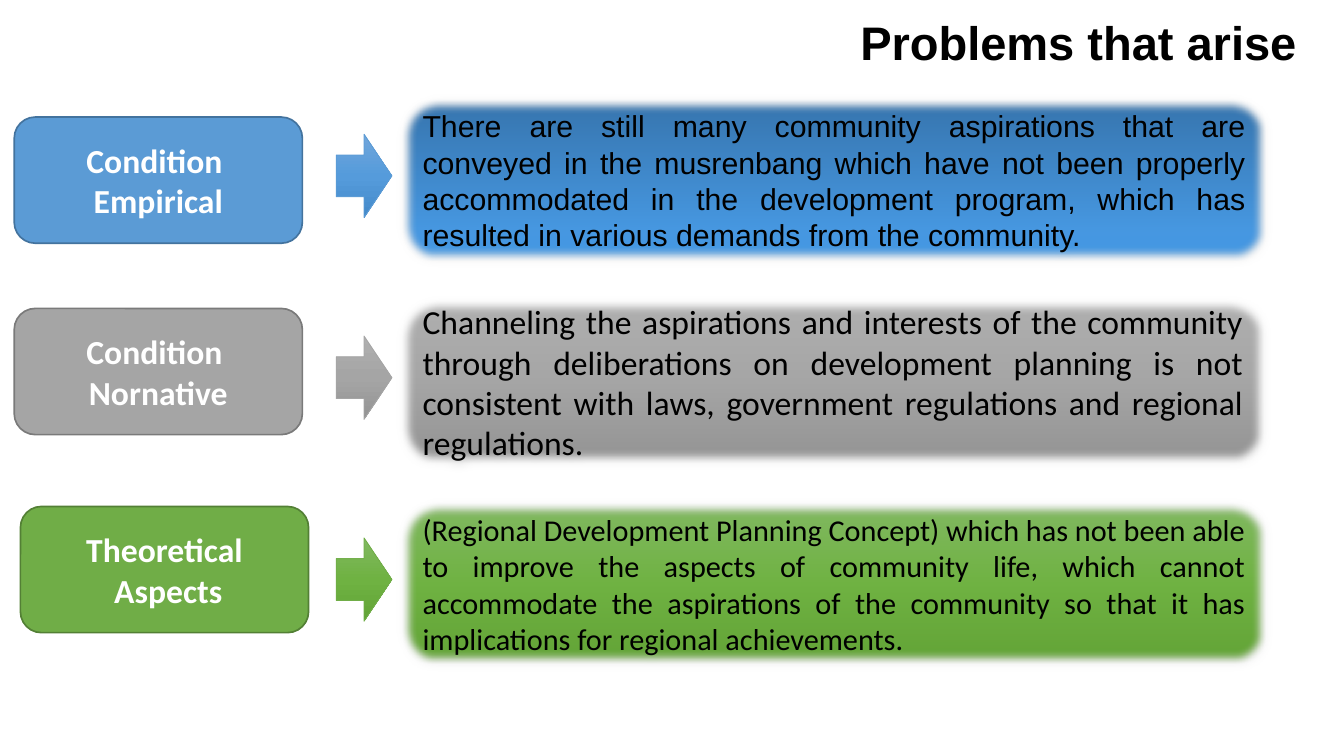
from copy import deepcopy
from dataclasses import dataclass

from pptx import Presentation
from pptx.dml.color import RGBColor
from pptx.enum.shapes import MSO_SHAPE
from pptx.enum.text import MSO_ANCHOR, MSO_AUTO_SIZE, PP_ALIGN
from pptx.oxml import parse_xml
from pptx.oxml.ns import nsdecls, qn
from pptx.shapes.autoshape import Shape
from pptx.slide import Slide
from pptx.text.text import TextFrame
from pptx.util import Cm, Pt

Stops = list[tuple[float, str]]

ROW_TOP, ROW_STEP = 2.11, 4.24
PANEL_LEFT, PANEL_HEIGHT = 8.46, 3.35
ARROW_LEFT, ARROW_WIDTH, ARROW_HEIGHT = 7.06, 1.17, 1.75
ARROW_DROP = 0.71
LABEL_WIDTH, LABEL_HEIGHT = 6.05, 2.65


@dataclass
class Problem:
    label: list[str]
    label_left: float
    label_top: float
    color: str
    border: str
    arrow_stops: Stops
    panel_stops: Stops
    panel_width: float
    text: str
    font: str
    size: int


BLUE = [(0, "71A6DB"), (0.5, "559BDB"), (1, "448ACA")]
DEEP_BLUE = [(0, "3674AD"), (0.8, "4697E0"), (1, "4498E4")]
GRAY = [(0, "AFAFAF"), (0.5, "A5A5A5"), (1, "939393")]
GREEN = [(0, "81B861"), (0.5, "6FB242"), (1, "62A336")]

PROBLEMS = [
    Problem(["Condition ", "Empirical"], 0.3, 2.46, "5B9BD5", "43739E",
            BLUE, DEEP_BLUE, 18.11,
            "There are still many community aspirations that are conveyed in "
            "the musrenbang which have not been properly accommodated in the "
            "development program, which has resulted in various demands from "
            "the community.", "Arial", 18),
    Problem(["Condition ", "Nornative"], 0.3, 6.48, "A5A5A5", "7A7A7A",
            GRAY, GRAY, 18.06,
            "Channeling the aspirations and interests of the community "
            "through deliberations on development planning is not consistent "
            "with laws, government regulations and regional regulations.",
            "Calibri", 20),
    Problem(["Theoretical", " Aspects"], 0.43, 10.64, "70AD47", "538035",
            GREEN, GREEN, 18.11,
            "(Regional Development Planning Concept) which has not been able "
            "to improve the aspects of community life, which cannot "
            "accommodate the aspirations of the community so that it has "
            "implications for regional achievements.", "Calibri", 18),
]


def rgb(color: str) -> RGBColor:
    return RGBColor.from_string(color)


def write(tf: TextFrame, lines: list[str], font: str, size: int, color: str,
          align: PP_ALIGN, bold: bool = False) -> None:
    tf.text = "\n".join(lines)
    for p in tf.paragraphs:
        p.alignment = align
        p.font.name = font
        p.font.size = Pt(size)
        p.font.bold = bold
        p.font.color.rgb = rgb(color)


def add_outlined(slide: Slide, kind: MSO_SHAPE, left: float, top: float,
                 width: float, height: float, line: str,
                 line_width: float) -> Shape:
    sp = slide.shapes.add_shape(kind, Cm(left), Cm(top), Cm(width), Cm(height))
    sp.shadow.inherit = False
    sp.line.color.rgb = rgb(line)
    sp.line.width = Pt(line_width)
    return sp


def fill_gradient(sp: Shape, stops: Stops) -> None:
    """Fill from top to bottom with three colour stops."""
    sp.fill.gradient()
    sp.fill.gradient_angle = 270
    gs_list = sp._element.spPr.find(".//" + qn("a:gsLst"))
    gs_list.insert(1, deepcopy(gs_list[0]))
    for stop, (position, color) in zip(sp.fill.gradient_stops, stops):
        stop.position = position
        stop.color.rgb = rgb(color)


def soften(sp: Shape) -> None:
    """Add a faint shadow and blurred edges."""
    effects = sp._element.spPr.find(qn("a:effectLst"))
    effects.append(parse_xml(
        f'<a:outerShdw {nsdecls("a")} blurRad="76200" dist="0" dir="18900000">'
        '<a:srgbClr val="000000"><a:alpha val="20000"/></a:srgbClr>'
        '</a:outerShdw>'))
    effects.append(parse_xml(f'<a:softEdge {nsdecls("a")} rad="63500"/>'))


def add_problem(slide: Slide, problem: Problem, top: float) -> None:
    arrow = add_outlined(slide, MSO_SHAPE.RIGHT_ARROW, ARROW_LEFT,
                         top + ARROW_DROP, ARROW_WIDTH, ARROW_HEIGHT,
                         problem.color, 0.5)
    fill_gradient(arrow, problem.arrow_stops)

    panel = add_outlined(slide, MSO_SHAPE.ROUNDED_RECTANGLE, PANEL_LEFT, top,
                         problem.panel_width, PANEL_HEIGHT, problem.color, 0.5)
    fill_gradient(panel, problem.panel_stops)
    soften(panel)
    write(panel.text_frame, [problem.text], problem.font, problem.size,
          "000000", PP_ALIGN.JUSTIFY)

    label = add_outlined(slide, MSO_SHAPE.ROUNDED_RECTANGLE,
                         problem.label_left, problem.label_top,
                         LABEL_WIDTH, LABEL_HEIGHT, problem.border, 1)
    label.fill.solid()
    label.fill.fore_color.rgb = rgb(problem.color)
    write(label.text_frame, problem.label, "Calibri", 20, "FFFFFF",
          PP_ALIGN.CENTER, bold=True)


def add_title(slide: Slide, text: str) -> None:
    title = slide.shapes.title
    title.left, title.top = Cm(17.81), Cm(0.15)
    title.width, title.height = Cm(9.78), Cm(1.45)
    tf = title.text_frame
    write(tf, [text], "Arial", 28, "000000", PP_ALIGN.JUSTIFY, bold=True)
    tf.word_wrap = False
    tf.auto_size = MSO_AUTO_SIZE.SHAPE_TO_FIT_TEXT
    tf.vertical_anchor = MSO_ANCHOR.TOP


def main() -> None:
    prs = Presentation()
    prs.slide_width, prs.slide_height = Cm(28.22), Cm(15.88)
    slide = prs.slides.add_slide(prs.slide_layouts[5])
    add_title(slide, "Problems that arise")
    for row, problem in enumerate(PROBLEMS):
        add_problem(slide, problem, ROW_TOP + row * ROW_STEP)
    prs.save("out.pptx")


if __name__ == "__main__":
    main()
